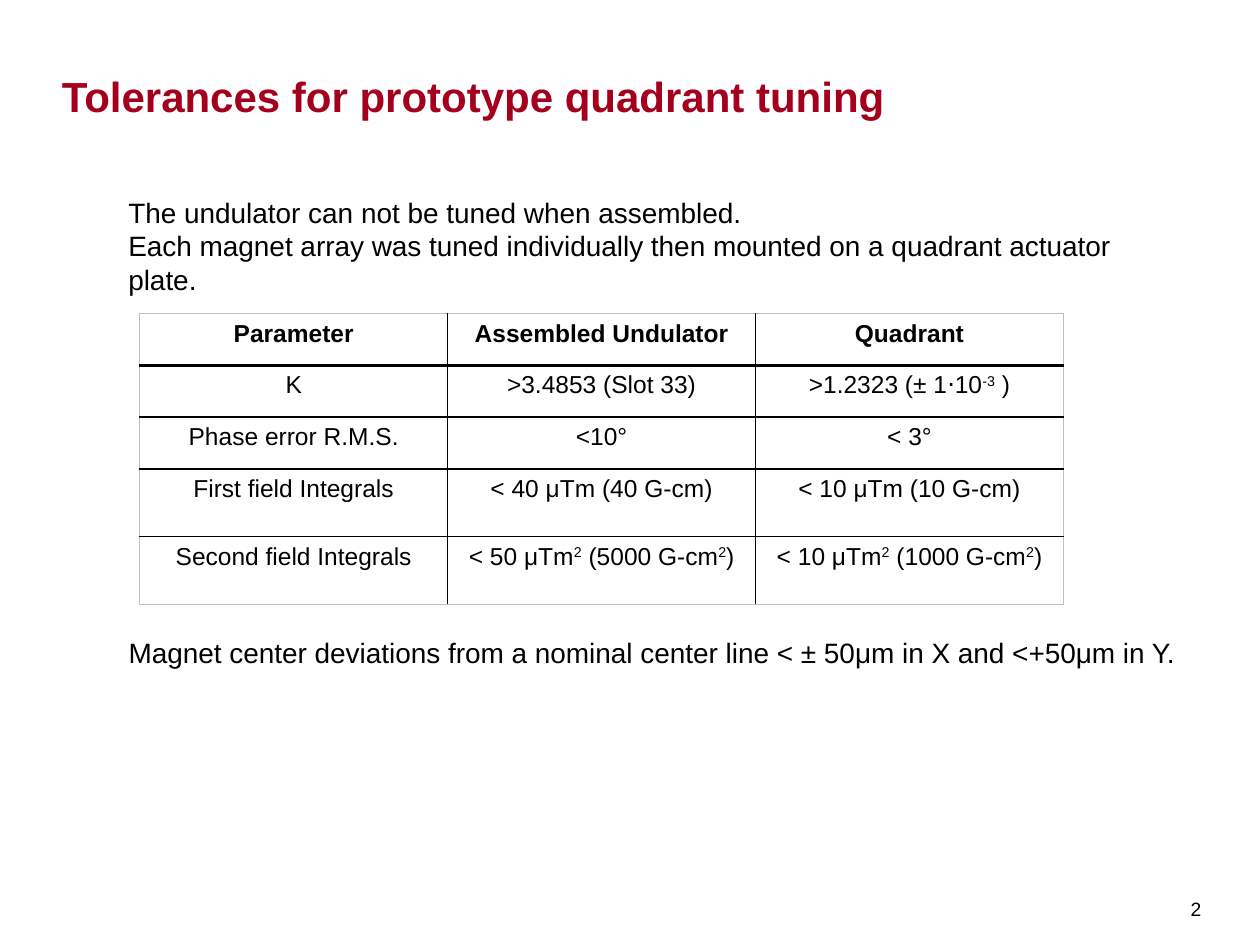
"""Build the slide on tolerances for prototype quadrant tuning."""
from lxml import etree
from pptx import Presentation
from pptx.dml.color import RGBColor
from pptx.enum.text import MSO_ANCHOR, MSO_AUTO_SIZE, PP_ALIGN
from pptx.oxml.ns import qn
from pptx.util import Inches, Pt

CENTER = PP_ALIGN.CENTER
LEFT = PP_ALIGN.LEFT
BOTTOM = MSO_ANCHOR.BOTTOM
MIDDLE = MSO_ANCHOR.MIDDLE
NO_AUTOFIT = MSO_AUTO_SIZE.NONE
COLORS = {"title": "A4001D", "text": "000000", "inner": "000000", "outer": "BFBFBF"}


def add_run(paragraph, text, size, color="text", bold=False, superscript=False):
    run = paragraph.add_run()
    run.text = text
    run.font.name = "Arial"
    run.font.size = Pt(size)
    run.font.bold = bold
    run.font.color.rgb = RGBColor.from_string(COLORS[color])
    if superscript:
        run._r.get_or_add_rPr().set("baseline", "30000")


def add_border(cell, side, color, width):
    line = etree.SubElement(cell._tc.get_or_add_tcPr(), qn(f"a:{side}"), w=str(Pt(width)))
    fill = etree.SubElement(line, qn("a:solidFill"))
    etree.SubElement(fill, qn("a:srgbClr"), val=COLORS[color])


presentation = Presentation()
presentation.slide_width = Inches(10)
presentation.slide_height = Inches(7.5)
slide = presentation.slides.add_slide(presentation.slide_layouts[5])

title = slide.shapes.title
title.left, title.top = Inches(0.49), Inches(0.14)
title.width, title.height = Inches(8.86), Inches(0.82)
frame = title.text_frame
frame.auto_size = NO_AUTOFIT
frame.vertical_anchor = BOTTOM
frame.margin_left = frame.margin_top = frame.margin_right = frame.margin_bottom = 0
frame.paragraphs[0].alignment = LEFT
add_run(frame.paragraphs[0], "Tolerances for prototype quadrant tuning", 24, "title", bold=True)

introduction = slide.shapes.add_textbox(Inches(0.92), Inches(1.5), Inches(8.04), Inches(0.64))
frame = introduction.text_frame
frame.word_wrap = True
add_run(frame.paragraphs[0], "The undulator can not be tuned when assembled.", 16)
add_run(
    frame.add_paragraph(),
    "Each magnet array was tuned individually then mounted on a quadrant actuator plate.",
    16,
)

ROWS = [
    [["Parameter"], ["Assembled Undulator"], ["Quadrant"]],
    [["K"], [">3.4853 (Slot 33)"], [">1.2323 (± 1⋅10", "-3", " )"]],
    [["Phase error R.M.S."], ["<10°"], ["< 3°"]],
    [["First field Integrals"], ["< 40 μTm (40 G-cm)"], ["< 10 μTm (10 G-cm)"]],
    [
        ["Second field Integrals"],
        ["< 50 μTm", "2", " (5000 G-cm", "2", ")"],
        ["< 10 μTm", "2", " (1000 G-cm", "2", ")"],
    ],
]
ROW_HEIGHTS = [0.41, 0.41, 0.41, 0.54, 0.54]
HORIZONTAL_LINES = [("outer", 0.5), ("inner", 1.5), ("inner", 1.5), ("inner", 1.5), ("inner", 1), ("outer", 0.5)]
VERTICAL_LINES = [("outer", 0.5), ("inner", 1), ("inner", 1), ("outer", 0.5)]

table = slide.shapes.add_table(
    len(ROWS), 3, Inches(1.11), Inches(2.49), Inches(7.33), Inches(sum(ROW_HEIGHTS))
).table
table.first_row = False
table.horz_banding = False
for column in table.columns:
    column.width = Inches(7.33 / 3)
for row_index, row in enumerate(ROWS):
    table.rows[row_index].height = Inches(ROW_HEIGHTS[row_index])
    for column_index, parts in enumerate(row):
        cell = table.cell(row_index, column_index)
        add_border(cell, "lnL", *VERTICAL_LINES[column_index])
        add_border(cell, "lnR", *VERTICAL_LINES[column_index + 1])
        add_border(cell, "lnT", *HORIZONTAL_LINES[row_index])
        add_border(cell, "lnB", *HORIZONTAL_LINES[row_index + 1])
        cell.fill.background()
        paragraph = cell.text_frame.paragraphs[0]
        paragraph.alignment = CENTER
        for part_index, part in enumerate(parts):
            add_run(paragraph, part, 14, bold=row_index == 0, superscript=part_index % 2 == 1)

deviations = slide.shapes.add_textbox(Inches(1.02), Inches(4.99), Inches(8.98), Inches(0.42))
frame = deviations.text_frame
frame.word_wrap = True
frame.margin_left = frame.margin_top = frame.margin_right = frame.margin_bottom = 0
paragraph = frame.paragraphs[0]
paragraph.line_spacing = 1.2
paragraph.space_after = Pt(3)
add_run(
    paragraph,
    "Magnet center deviations from a nominal center line < ± 50μm in X and <+50μm in Y.",
    16,
)

slide_number = slide.shapes.add_textbox(Inches(9.37), Inches(6.91), Inches(0.35), Inches(0.59))
frame = slide_number.text_frame
frame.word_wrap = True
frame.vertical_anchor = MIDDLE
frame.margin_left = frame.margin_right = Inches(0.08)
frame.margin_top, frame.margin_bottom = Inches(0.06), Inches(0.05)
add_run(frame.paragraphs[0], "2", 11)

presentation.save("out.pptx")
